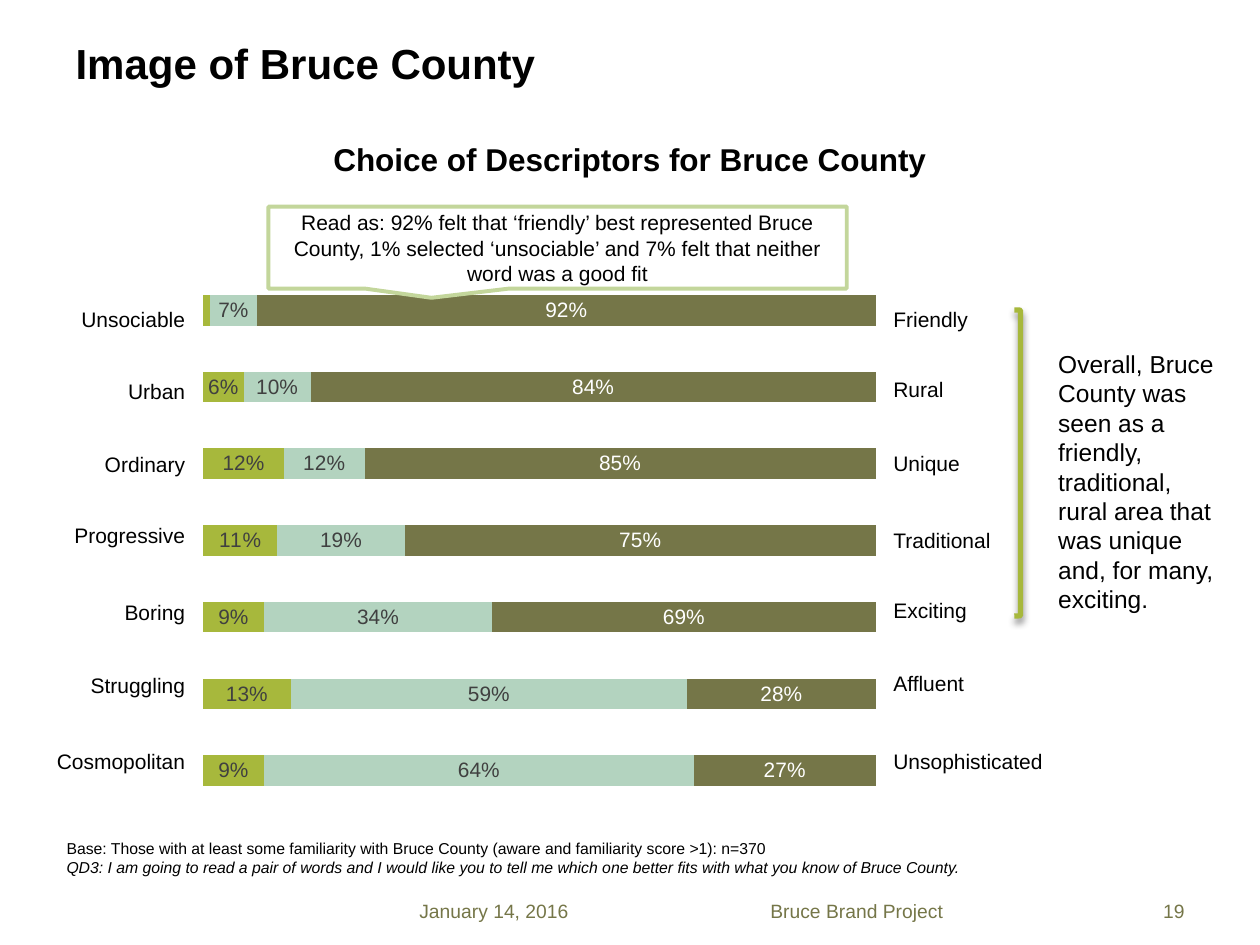
from dataclasses import dataclass

from lxml import etree
from pptx import Presentation
from pptx.chart.data import CategoryChartData
from pptx.dml.color import RGBColor
from pptx.enum.chart import XL_CHART_TYPE as Chart
from pptx.enum.shapes import MSO_SHAPE as Shape
from pptx.enum.text import MSO_ANCHOR as Anchor, PP_ALIGN as Align
from pptx.oxml import parse_xml
from pptx.oxml.ns import nsdecls, qn
from pptx.util import Inches, Pt


@dataclass(frozen=True)
class Theme:
    font: str = "Arial"
    ink: str = "000000"
    paper: str = "FFFFFF"
    label: str = "404040"
    lime: str = "A7B83C"
    mint: str = "B3D3BF"
    olive: str = "757648"
    callout: str = "C3D69B"
    title: float = 24
    subtitle: float = 18
    comment: float = 14
    body: float = 12
    value: float = 11.9
    footer: float = 11
    note: float = 9


def rgb(value):
    return RGBColor.from_string(value)


def inches(box):
    return [Inches(v) for v in box]


class Deck:
    """Hold the style and the current slide, and add elements to it."""

    def __init__(self, theme):
        self.t = theme
        self.prs = Presentation()
        self.prs.slide_width, self.prs.slide_height = Inches(10), Inches(7.5)
        self.s = self.prs.slides.add_slide(self.prs.slide_layouts[5])

    def style(self, font, size, color, bold=False, italic=False):
        font.name, font.size = self.t.font, Pt(size)
        font.color.rgb = rgb(color)
        font.bold, font.italic = bold, italic

    def run(self, p, text, size, color=None, align=Align.LEFT, **flags):
        p.alignment = align
        r = p.add_run()
        r.text = text
        self.style(r.font, size, color or self.t.ink, **flags)

    def title(self, box, text):
        sp = self.s.shapes.title
        sp.left, sp.top, sp.width, sp.height = inches(box)
        tf = sp.text_frame
        tf.vertical_anchor = Anchor.MIDDLE
        self.run(tf.paragraphs[0], text, self.t.title, bold=True)

    def text(self, box, text, size, anchor=Anchor.TOP, **look):
        tf = self.s.shapes.add_textbox(*inches(box)).text_frame
        tf.word_wrap = True
        tf.vertical_anchor = anchor
        self.run(tf.paragraphs[0], text, size, **look)
        return tf

    def words(self, left, heights, words, align):
        box = inches((left, 2.4, 1.46, sum(heights)))
        table = self.s.shapes.add_table(len(words), 1, *box).table
        table.first_row = table.horz_banding = False
        for row, height, word in zip(table.rows, heights, words):
            row.height = Inches(height)
            cell = row.cells[0]
            cell.fill.background()
            self.run(cell.text_frame.paragraphs[0], word, self.t.body, align=align)

    def shape(self, kind, box, line, width, fill=None):
        sp = self.s.shapes.add_shape(kind, *inches(box))
        sp.shadow.inherit = False
        if fill:
            sp.fill.solid()
            sp.fill.fore_color.rgb = rgb(fill)
        else:
            sp.fill.background()
        sp.line.color.rgb = rgb(line)
        sp.line.width = Pt(width)
        return sp

    def callout(self, box, text):
        sp = self.shape(Shape.RECTANGULAR_CALLOUT, box, self.t.callout, 2.25, self.t.paper)
        sp.adjustments[0], sp.adjustments[1] = -0.218, 0.613
        tf = sp.text_frame
        tf.word_wrap = True
        tf.vertical_anchor = Anchor.MIDDLE
        self.run(tf.paragraphs[0], text, self.t.body, align=Align.CENTER)

    def bracket(self, box):
        sp = self.shape(Shape.RIGHT_BRACKET, box, self.t.lime, 3)
        effects = sp._element.spPr.find(qn("a:effectLst"))
        shadow = etree.SubElement(effects, qn("a:outerShdw"), blurRad=str(Pt(4)),
                                  dist=str(Pt(3)), dir="5400000", rotWithShape="0")
        color = etree.SubElement(shadow, qn("a:srgbClr"), val=self.t.ink)
        etree.SubElement(color, qn("a:alpha"), val="43000")

    def chart(self, box, series):
        data = CategoryChartData(number_format="0%")
        data.categories = [str(n) for n in range(1, 8)]
        for n, (values, *_) in enumerate(series, 1):
            data.add_series(f"Series {n}", values)
        chart = self.s.shapes.add_chart(Chart.BAR_STACKED, *inches(box), data).chart
        self.style(chart.font, 10, self.t.ink)
        chart.has_legend = chart.has_title = False
        axis = chart.value_axis
        axis.minimum_scale, axis.maximum_scale = 0, 1.2
        axis.has_major_gridlines = False
        axis.visible = chart.category_axis.visible = False
        self.layout(chart)
        plot = chart.plots[0]
        plot.gap_width, plot.overlap, plot.vary_by_categories = 150, 100, False
        for ser, (_, fill, color, custom) in zip(plot.series, series):
            ser.format.fill.solid()
            ser.format.fill.fore_color.rgb = rgb(fill)
            self.labels(ser, color, custom)

    def layout(self, chart):
        area = chart._chartSpace.chart.plotArea
        for old in area.findall(qn("c:layout")):
            area.remove(old)
        parts = (("layoutTarget", "inner"), ("xMode", "edge"), ("yMode", "edge"),
                 ("x", 0.02), ("y", 0.02), ("w", 0.96), ("h", 0.96))
        body = "".join(f'<c:{tag} val="{val}"/>' for tag, val in parts)
        area.insert(0, parse_xml(f"<c:layout {nsdecls('c')}><c:manualLayout>{body}"
                                 "</c:manualLayout></c:layout>"))

    def labels(self, ser, color, custom):
        labels = ser.data_labels
        labels.show_value = True
        labels.number_format, labels.number_format_is_linked = "0%", False
        self.style(labels.font, self.t.value, color)
        for index, text in custom.items():
            if text:
                p = ser.points[index].data_label.text_frame.paragraphs[0]
                self.run(p, text, self.t.value, color, Align.CENTER)
            else:
                labels._element.insert(0, parse_xml(
                    f'<c:dLbl {nsdecls("c")}><c:idx val="{index}"/>'
                    '<c:delete val="1"/></c:dLbl>'))


def main():
    t = Theme()
    deck = Deck(t)
    deck.title((0.5, 0.24, 6.67, 0.52), "Image of Bruce County")
    deck.text((0.5, 1.06, 9, 0.58), "Choice of Descriptors for Bruce County",
              t.subtitle, align=Align.CENTER, bold=True)
    for left, width, text, align in (
            (3.23, 1.75, "January 14, 2016", Align.LEFT),
            (4.99, 3.62, "Bruce Brand Project", Align.CENTER),
            (8.62, 0.88, "19", Align.RIGHT)):
        deck.text((left, 7.09, width, 0.28), text, t.footer, Anchor.MIDDLE,
                  color=t.olive, align=align)
    deck.chart((1.48, 2.07, 6.67, 4.44), (
        ((0.09, 0.13, 0.09, 0.11, 0.12, 0.06, 0.01), t.lime, t.label, {6: ""}),
        ((0.64, 0.59, 0.34, 0.19, 0.12, 0.10, 0.07), t.mint, t.label, {}),
        ((0.27, 0.28, 0.57, 0.70, 0.76, 0.84, 0.92), t.olive, t.paper,
         {2: "69%", 3: "75%", 4: "85%"})))
    deck.words(0.11, (0.57, 0.58, 0.56, 0.61, 0.58, 0.61, 0.34),
               ("Unsociable", "Urban", "Ordinary", "Progressive", "Boring",
                "Struggling", "Cosmopolitan"), Align.RIGHT)
    deck.words(6.99, (0.55, 0.59, 0.61, 0.56, 0.58, 0.62, 0.41),
               ("Friendly", "Rural", "Unique", "Traditional", "Exciting",
                "Affluent", "Unsophisticated"), Align.LEFT)
    deck.callout((2.13, 1.64, 4.59, 0.65),
                 "Read as: 92% felt that ‘friendly’ best represented Bruce County, "
                 "1% selected ‘unsociable’ and 7% felt that neither word was a good fit")
    deck.bracket((8.05, 2.46, 0.05, 2.43))
    deck.text((8.3, 2.72, 1.45, 2.22),
              "Overall, Bruce County was seen as a friendly, traditional, rural area "
              "that was unique and, for many, exciting.", t.comment)
    tf = deck.text((0.43, 6.61, 9.2, 0.4),
                   "Base: Those with at least some familiarity with Bruce County "
                   "(aware and familiarity score >1): n=370", t.note)
    deck.run(tf.add_paragraph(),
             "QD3: I am going to read a pair of words and I would like you to tell me "
             "which one better fits with what you know of Bruce County.",
             t.note, italic=True)
    deck.prs.save("out.pptx")


if __name__ == "__main__":
    main()
